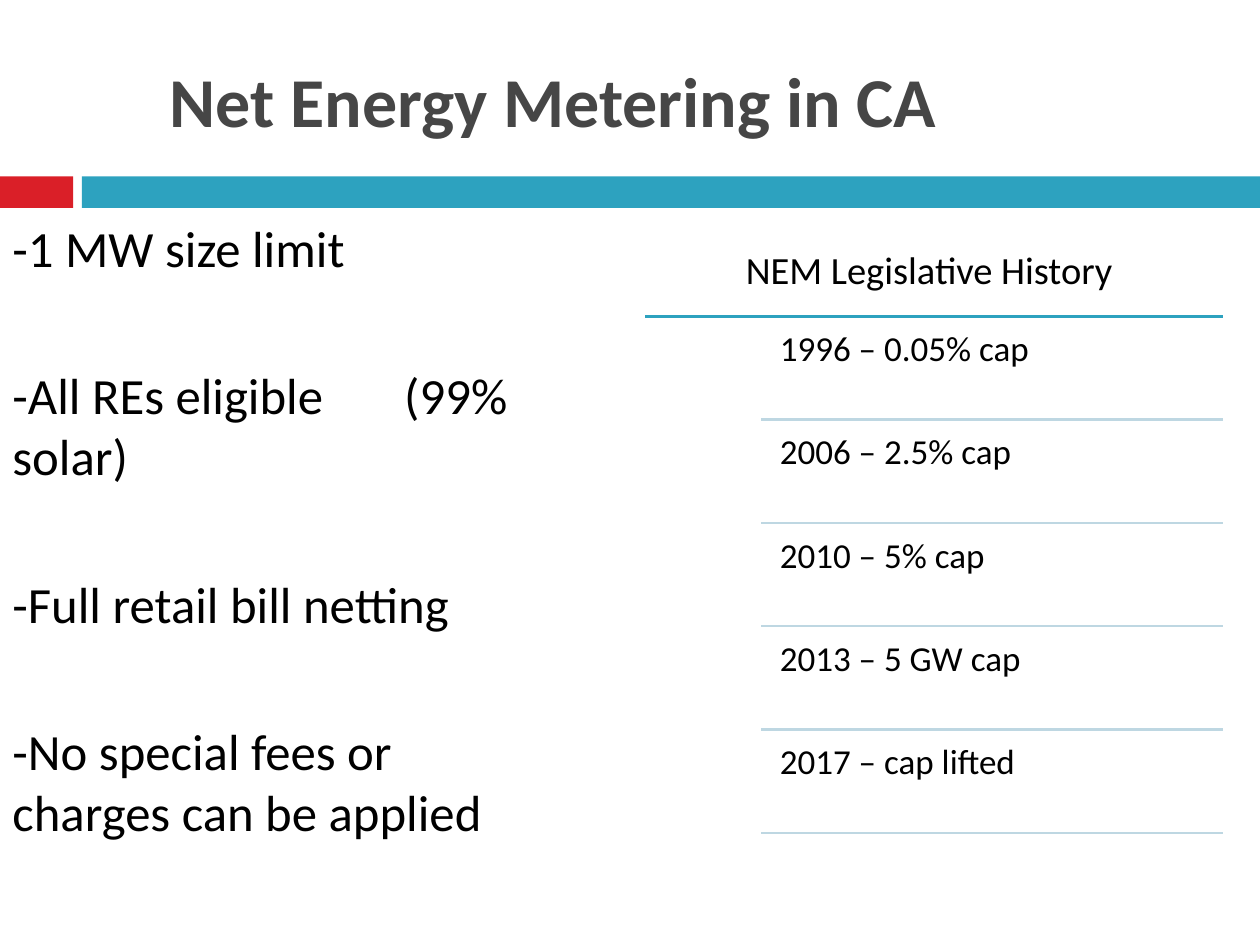
"""Build the Net Energy Metering slide with its legislative history list."""
from lxml.etree import SubElement
from pptx import Presentation
from pptx.dml.color import RGBColor
from pptx.enum.shapes import MSO_CONNECTOR as Connector, MSO_SHAPE as Preset
from pptx.enum.text import MSO_ANCHOR as Anchor, PP_ALIGN as Align
from pptx.oxml.ns import qn
from pptx.util import Inches, Pt

TITLE = "Net Energy Metering in CA"
POINTS = [
    "-1 MW size limit",
    "-All REs eligible\t(99% solar)",
    "-Full retail bill netting",
    "-No special fees or charges can be applied",
]
HISTORY_TITLE = "NEM Legislative History"
HISTORY = [
    "1996 – 0.05% cap",
    "2006 – 2.5% cap",
    "2010 – 5% cap",
    "2013 – 5 GW cap",
    "2017 – cap lifted",
]

COLORS = {"red": "DA1F28", "teal": "2DA2BF", "pale": "BED7E2",
          "title": "464646", "text": "000000"}
FONT = "Calibri"
WIDTH, HEIGHT = 10, 7.5
BAND_TOP, BAND_HEIGHT = 1.4, 0.25
BANDS = [(0, 0.58, "red"), (0.65, WIDTH, "teal")]
BODY_TOP, BODY_WIDTH = 1.67, 4.42
POINT_GAP, TAB_STOP = 49.4, 3.11
HISTORY_LEFT, RULE_LEFT, HISTORY_RIGHT = 5.12, 6.04, 9.71
HISTORY_TOP, ROW_HEIGHT = 2.51, 0.82
ROW_INDENT, ROW_GAP, ROW_INSET = 0.07, 0.04, 0.08


def color(name):
    return RGBColor.from_string(COLORS[name])


def add_band(slide, left, right, fill):
    shape = slide.shapes.add_shape(Preset.RECTANGLE, Inches(left), Inches(BAND_TOP),
                                   Inches(right - left), Inches(BAND_HEIGHT))
    shape.shadow.inherit = False
    shape.fill.solid()
    shape.fill.fore_color.rgb = color(fill)
    shape.line.fill.background()


def add_text(slide, box, lines, size, ink="text", bold=False, align=Align.LEFT,
             anchor=Anchor.TOP, gap=0, spacing=1.0, inset=None):
    shape = slide.shapes.add_textbox(*map(Inches, box))
    frame = shape.text_frame
    frame.word_wrap = True
    frame.vertical_anchor = anchor
    if inset is not None:
        frame.margin_left = frame.margin_right = Inches(inset)
        frame.margin_top = frame.margin_bottom = Inches(inset)
    for index, line in enumerate(lines):
        paragraph = frame.paragraphs[0] if index == 0 else frame.add_paragraph()
        paragraph.alignment = align
        paragraph.line_spacing = spacing
        paragraph.space_before = Pt(gap if index else 0)
        if "\t" in line:
            stops = SubElement(paragraph._p.get_or_add_pPr(), qn("a:tabLst"))
            SubElement(stops, qn("a:tab"), pos=str(Inches(TAB_STOP)), algn="l")
        run = paragraph.add_run()
        run.text = line
        run.font.name = FONT
        run.font.size = Pt(size)
        run.font.bold = bold
        run.font.color.rgb = color(ink)


def add_rule(slide, left, y, ink):
    rule = slide.shapes.add_connector(Connector.STRAIGHT, Inches(left), Inches(y),
                                      Inches(HISTORY_RIGHT), Inches(y))
    rule.line.color.rgb = color(ink)
    rule.line.width = Pt(1.5)
    SubElement(rule._element.spPr, qn("a:effectLst"))


def add_history(slide):
    add_rule(slide, HISTORY_LEFT, HISTORY_TOP, "teal")
    left = RULE_LEFT + ROW_INDENT
    for row, entry in enumerate(HISTORY):
        top = HISTORY_TOP + row * ROW_HEIGHT
        box = (left, top + ROW_GAP, HISTORY_RIGHT - left, ROW_HEIGHT - ROW_GAP)
        add_text(slide, box, [entry], 20, spacing=0.9, inset=ROW_INSET)
        add_rule(slide, RULE_LEFT, top + ROW_HEIGHT, "pale")
    add_text(slide, (5.21, 1.9, 4.33, 0.47), [HISTORY_TITLE], 22, align=Align.CENTER)


def main():
    presentation = Presentation()
    presentation.slide_width, presentation.slide_height = Inches(WIDTH), Inches(HEIGHT)
    slide = presentation.slides.add_slide(presentation.slide_layouts[6])
    for band in BANDS:
        add_band(slide, *band)
    add_text(slide, (1.25, 0.25, 8.92, 1.08), [TITLE], 40, "title", bold=True,
             anchor=Anchor.MIDDLE)
    add_text(slide, (0, BODY_TOP, BODY_WIDTH, HEIGHT - BODY_TOP), POINTS, 29,
             gap=POINT_GAP)
    add_history(slide)
    presentation.save("out.pptx")


if __name__ == "__main__":
    main()
